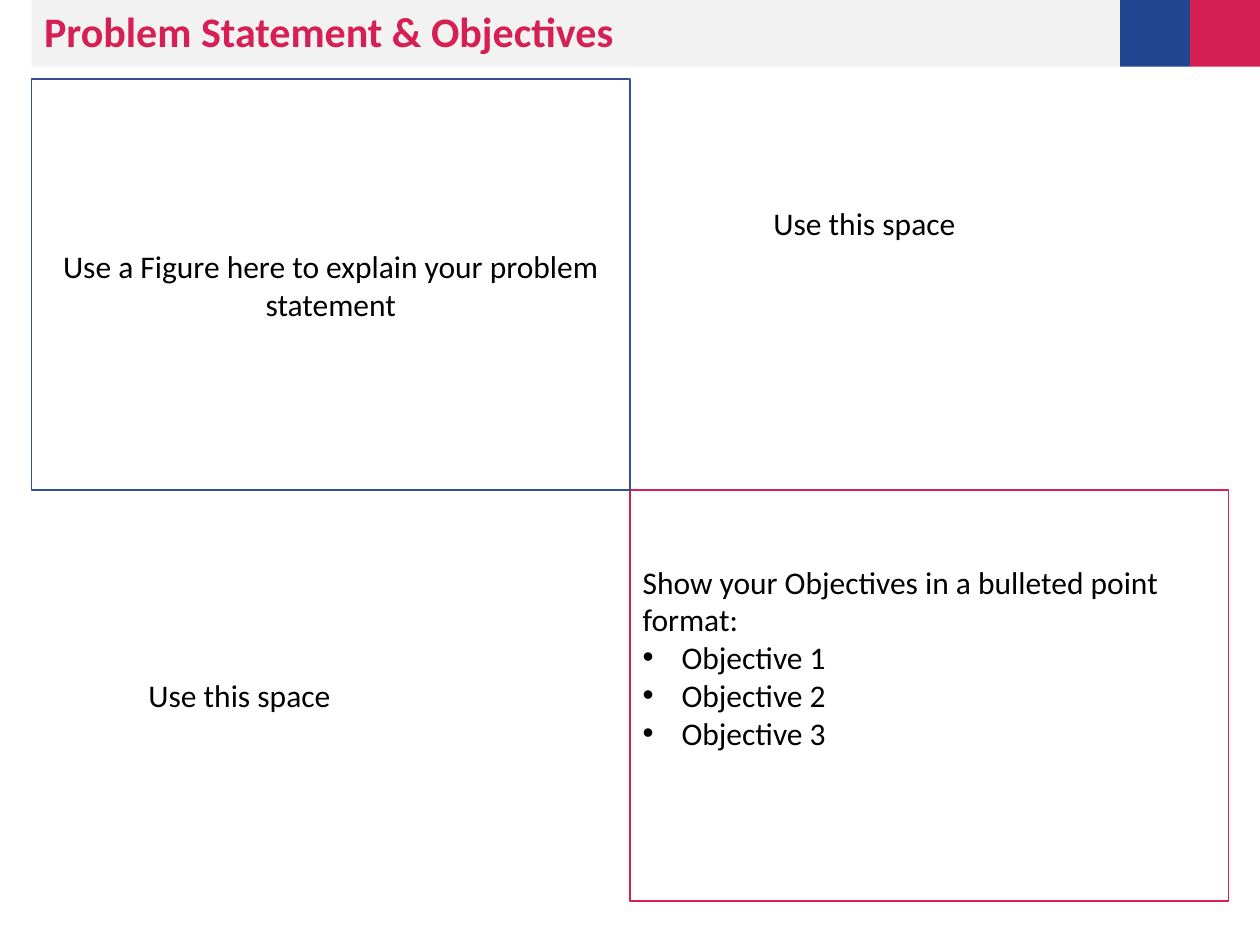
"""Build the Problem Statement & Objectives slide."""
from lxml import etree
from pptx import Presentation
from pptx.dml.color import RGBColor
from pptx.enum.shapes import MSO_SHAPE
from pptx.enum.text import MSO_ANCHOR, MSO_AUTO_SIZE, PP_ALIGN
from pptx.oxml.ns import qn
from pptx.util import Inches, Pt

RECT = MSO_SHAPE.RECTANGLE
MIDDLE, TOP = MSO_ANCHOR.MIDDLE, MSO_ANCHOR.TOP
LEFT, CENTER = PP_ALIGN.LEFT, PP_ALIGN.CENTER
NO_FIT = MSO_AUTO_SIZE.NONE

COLORS = {"pink": "D61F55", "blue": "21468F", "outline": "364F96",
          "bar": "F2F2F2", "white": "FFFFFF", "black": "000000"}

TITLE = "Problem Statement & Objectives"
FIGURE_TEXT = "Use a Figure here to explain your problem statement"
OBJECTIVES_INTRO = "Show your Objectives in a bulleted point format:"
OBJECTIVES = ["Objective 1", "Objective 2", "Objective 3"]
HINT = "Use this space"
HINT_SPOTS = [(6.04, 1.57), (1.08, 5.32)]
HEADER_BLOCKS = ["blue", "pink"]

MARGIN, HEADER_H, BLOCK_W = 0.25, 0.53, 0.56
BLOCKS_LEFT = 8.89
PANEL_TOP, PANEL_W, PANEL_H = 0.63, 4.75, 3.26
HINT_W, HINT_H = 2.93, 0.4
BULLET_INDENT = 0.31
OBJECTIVES_BOTTOM_INSET = 0.66


def rgb(name):
    return RGBColor.from_string(COLORS[name])


def place(sp, x, y, w, h):
    sp.left, sp.top, sp.width, sp.height = map(Inches, (x, y, w, h))


def paint(sp, fill, line=None):
    sp.fill.solid()
    sp.fill.fore_color.rgb = rgb(fill)
    if line:
        sp.line.color.rgb = rgb(line)
        sp.line.width = Pt(1)
    else:
        sp.line.fill.background()


def add_rect(s, x, y, w, h, fill, line=None):
    sp = s.shapes.add_shape(RECT, *map(Inches, (x, y, w, h)))
    sp.shadow.inherit = False
    paint(sp, fill, line)
    return sp


def write(sp, lines, size=18, color="black", bold=False, align=LEFT, anchor=MIDDLE):
    tf = sp.text_frame
    tf.text = "\n".join(lines)
    tf.word_wrap = True
    tf.auto_size = NO_FIT
    tf.vertical_anchor = anchor
    for p in tf.paragraphs:
        p.alignment = align
        p.space_before = Pt(0)
        p.font.name = "Calibri"
        p.font.size = Pt(size)
        p.font.bold = bold
        p.font.color.rgb = rgb(color)
    return tf


def set_bullet(p, char=None):
    pPr = p._p.get_or_add_pPr()
    indent = Inches(BULLET_INDENT) if char else 0
    pPr.set("marL", str(indent))
    pPr.set("indent", str(-indent))
    bullet = etree.Element(qn("a:buChar" if char else "a:buNone"))
    if char:
        bullet.set("char", char)
    pPr.find(qn("a:defRPr")).addprevious(bullet)


def main():
    prs = Presentation()
    prs.slide_width, prs.slide_height = Inches(10), Inches(7.5)
    s = prs.slides.add_slide(prs.slide_layouts[1])
    title, body = s.placeholders

    for i, color in enumerate(HEADER_BLOCKS):
        add_rect(s, BLOCKS_LEFT + i * (10 - BLOCKS_LEFT) / 2, 0, BLOCK_W - 0.005, HEADER_H, color)
    place(title, MARGIN, 0, BLOCKS_LEFT - MARGIN, HEADER_H)
    paint(title, "bar")
    write(title, [TITLE], 24, "pink", bold=True).paragraphs[0].line_spacing = 0.9

    figure = add_rect(s, MARGIN, PANEL_TOP, PANEL_W, PANEL_H, "white", "outline")
    write(figure, [FIGURE_TEXT], align=CENTER)

    place(body, MARGIN + PANEL_W, PANEL_TOP + PANEL_H, PANEL_W, PANEL_H)
    paint(body, "white", "pink")
    tf = write(body, [OBJECTIVES_INTRO, *OBJECTIVES])
    tf.margin_bottom = Inches(OBJECTIVES_BOTTOM_INSET)
    for i, p in enumerate(tf.paragraphs):
        set_bullet(p, "•" if i else None)

    for x, y in HINT_SPOTS:
        box = s.shapes.add_textbox(*map(Inches, (x, y, HINT_W, HINT_H)))
        write(box, [HINT], anchor=TOP)

    prs.save("out.pptx")


if __name__ == "__main__":
    main()
